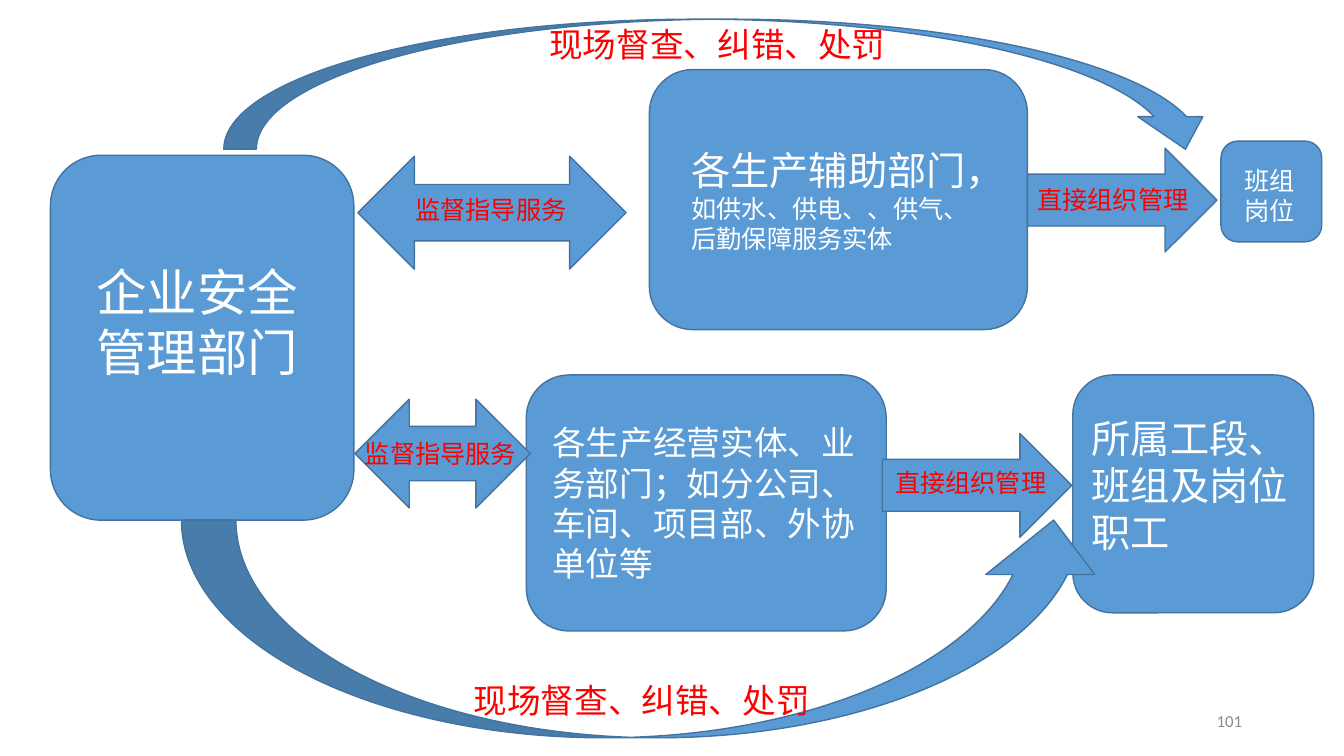
from pptx import Presentation
from pptx.dml.color import RGBColor
from pptx.enum.shapes import MSO_SHAPE as Kind
from pptx.enum.text import MSO_ANCHOR as Anchor, MSO_AUTO_SIZE as Fit, PP_ALIGN as Align
from pptx.util import Inches, Pt

BLUE = RGBColor(0x5B, 0x9B, 0xD5)
EDGE = RGBColor(0x43, 0x73, 0x9E)
WHITE = RGBColor(0xFF, 0xFF, 0xFF)
RED = RGBColor(0xFF, 0x00, 0x00)
GRAY = RGBColor(0x8C, 0x8C, 0x8C)

GUIDE = "监督指导服务"
DIRECT = "直接组织管理"
CHECK = "现场督查、纠错、处罚"


class Chart:
    """Draws the blue shapes and texts of the safety management chart."""

    font = "Calibri"

    def __init__(self, slide):
        self.shapes = slide.shapes

    def shape(self, kind, *box):
        item = self.shapes.add_shape(kind, *map(Inches, box))
        item.shadow.inherit = False
        item.fill.solid()
        item.fill.fore_color.rgb = BLUE
        item.line.color.rgb = EDGE
        item.line.width = Pt(1)

    def style(self, run, size, color):
        run.font.name = self.font
        run.font.size = Pt(size)
        run.font.color.rgb = color

    def text(self, words, size, color, *box):
        frame = self.shapes.add_textbox(*map(Inches, box)).text_frame
        frame.word_wrap = True
        frame.auto_size = Fit.SHAPE_TO_FIT_TEXT
        frame.text = words
        for para in frame.paragraphs:
            for run in para.runs:
                self.style(run, size, color)
        return frame

    def number(self, words, *box):
        frame = self.text(words, 12, GRAY, *box)
        frame.auto_size = Fit.NONE
        frame.vertical_anchor = Anchor.MIDDLE
        frame.paragraphs[0].alignment = Align.RIGHT

    def support(self, title, first, second, *box):
        frame = self.text(title, 28, WHITE, *box)
        head = frame.paragraphs[0]
        for para, words in ((head, first), (frame.add_paragraph(), second)):
            run = para.add_run()
            run.text = words
            self.style(run, 18, WHITE)


def main():
    deck = Presentation()
    deck.slide_width = Inches(13.33)
    deck.slide_height = Inches(7.5)
    chart = Chart(deck.slides.add_slide(deck.slide_layouts[6]))

    chart.number("101", 9.42, 6.95, 3, 0.4)
    for box in (
        (0.5, 1.54, 3.01, 3.62),
        (5.22, 3.72, 3.57, 2.54),
        (10.64, 3.72, 2.39, 2.36),
        (6.44, 0.69, 3.75, 2.58),
        (12.11, 1.4, 1, 1),
    ):
        chart.shape(Kind.ROUNDED_RECTANGLE, *box)

    chart.text("企业安全管理部门", 36, WHITE, 0.86, 2.54, 2.27, 1.31)
    chart.support("各生产辅助部门，", "如供水、供电、、供气、", "后勤保障服务实体",
                  6.76, 1.4, 3.52, 1.18)
    chart.text("各生产经营实体、业务部门；如分公司、车间、项目部、外协单位等",
               24, WHITE, 5.38, 4.14, 3.21, 1.72)
    chart.text("所属工段、班组及岗位职工", 28, WHITE, 10.73, 4.06, 2.22, 1.51)
    chart.text("班组岗位", 18, WHITE, 12.24, 1.59, 0.85, 0.71)

    for kind, box, words, size, label in (
        (Kind.RIGHT_ARROW, (8.75, 4.3, 1.88, 1.03),
         DIRECT, 18, (8.78, 4.59, 1.75, 0.4)),
        (Kind.RIGHT_ARROW, (10.19, 1.47, 1.88, 1.03),
         DIRECT, 18, (10.19, 1.78, 1.75, 0.4)),
        (Kind.CURVED_UP_ARROW, (1.8, 5.16, 9.19, 2.16),
         CHECK, 24, (4.6, 6.7, 3.59, 0.5)),
        (Kind.CURVED_DOWN_ARROW, (2.22, 0.19, 9.86, 1.29),
         CHECK, 24, (5.35, 0.19, 3.59, 0.5)),
        (Kind.LEFT_RIGHT_ARROW, (3.55, 1.55, 2.66, 1.12),
         GUIDE, 18, (4.02, 1.88, 1.72, 0.4)),
        (Kind.LEFT_RIGHT_ARROW, (3.52, 3.96, 1.74, 1.08),
         GUIDE, 18, (3.52, 4.3, 1.82, 0.4)),
    ):
        chart.shape(kind, *box)
        chart.text(words, size, RED, *label)

    deck.save("out.pptx")


if __name__ == "__main__":
    main()
